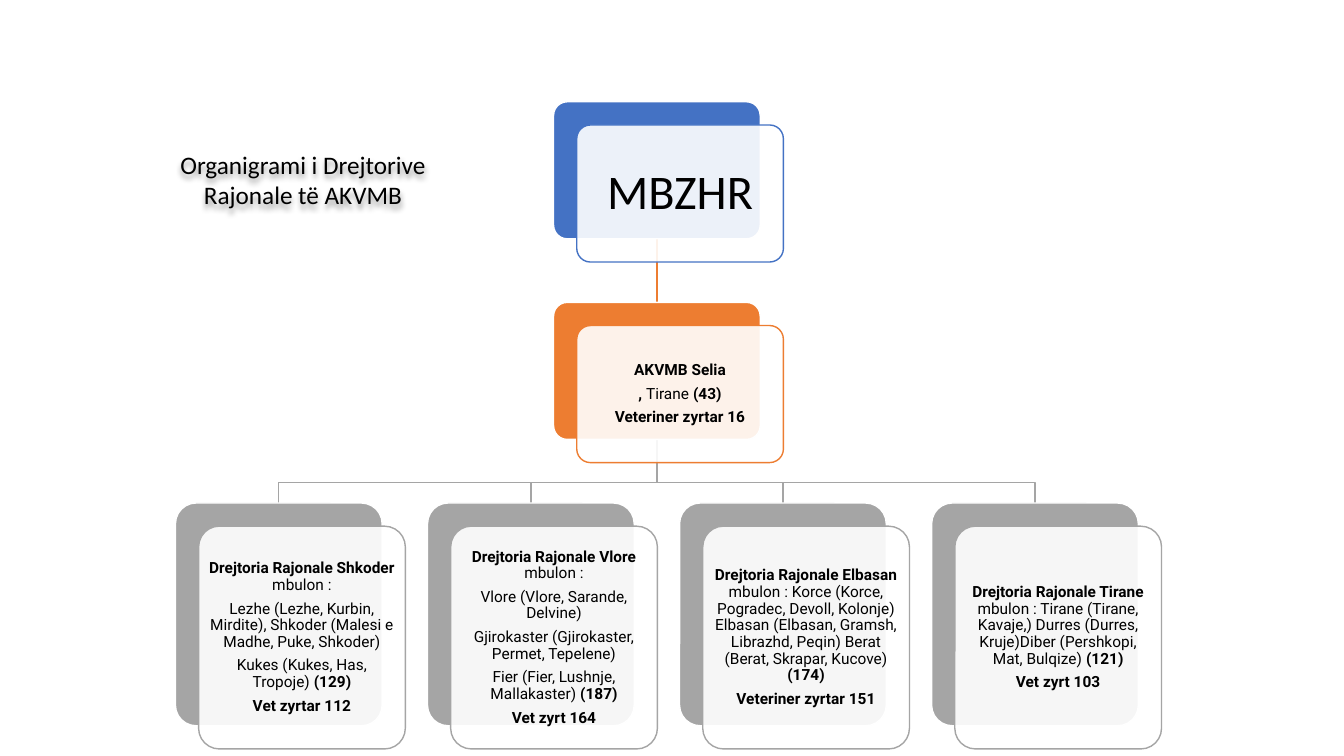
from lxml.etree import SubElement
from pptx import Presentation
from pptx.dml.color import RGBColor
from pptx.enum.shapes import MSO_CONNECTOR as Connector, MSO_SHAPE as Preset
from pptx.enum.text import MSO_ANCHOR as Anchor, PP_ALIGN as Align
from pptx.oxml.ns import qn
from pptx.util import Inches, Pt

COLORS = {
    "ministry": "4472C4",
    "agency": "ED7D31",
    "region": "A5A5A5",
    "paper": "FFFFFF",
    "ink": "000000",
}
CARD_WIDTH = 2.05
CARD_OFFSET = 0.23
CENTER_LEFT = 5.49
CENTER_X = CENTER_LEFT + CARD_WIDTH / 2
UPPER_HEIGHT = 1.36
MINISTRY_TOP, AGENCY_TOP, REGION_TOP = 1.01, 3.0, 4.99
REGION_HEIGHT = 2.21
REGION_LEFT, REGION_STEP = 1.74, 2.5
BRANCH_Y = 4.79

AGENCY = ["*AKVMB Selia*", "*, *Tirane *(43)*", "*Veteriner zyrtar 16*"]
REGIONS = [
    [
        "*Drejtoria Rajonale Shkoder *mbulon :",
        "Lezhe (Lezhe, Kurbin, Mirdite), Shkoder (Malesi e Madhe, Puke, Shkoder)",
        "Kukes (Kukes, Has, Tropoje)* (129)*",
        "*Vet zyrtar 112*",
    ],
    [
        "*Drejtoria Rajonale Vlore *mbulon :",
        "Vlore (Vlore, Sarande, Delvine)",
        "Gjirokaster (Gjirokaster, Permet, Tepelene)",
        "Fier (Fier, Lushnje, Mallakaster) *(187)*",
        "*Vet zyrt 164*",
    ],
    [
        "*Drejtoria Rajonale Elbasan *mbulon : Korce (Korce, Pogradec, Devoll, "
        "Kolonje) Elbasan (Elbasan, Gramsh, Librazhd, Peqin) Berat (Berat, "
        "Skrapar, Kucove) *(174)*",
        "*Veteriner zyrtar 151*",
    ],
    [
        "*Drejtoria Rajonale Tirane *mbulon : Tirane (Tirane, Kavaje,) Durres "
        "(Durres, Kruje)Diber (Pershkopi, Mat, Bulqize) *(121)*",
        "*Vet zyrt 103*",
    ],
]


class Chart:
    def __init__(self, page):
        self.shapes = page.shapes

    def color(self, name):
        return RGBColor.from_string(COLORS[name])

    def outline(self, shape, name):
        shape.line.color.rgb = self.color(name)
        shape.line.width = Pt(1)

    def add_lines(self, frame, lines, size, font, after=0, spacing=1.0):
        frame.word_wrap = True
        frame.vertical_anchor = Anchor.MIDDLE
        for index, line in enumerate(lines):
            para = frame.paragraphs[0] if index == 0 else frame.add_paragraph()
            para.alignment = Align.CENTER
            para.line_spacing = spacing
            para.space_after = Pt(after)
            para.font.size = Pt(size)
            para.font.name = font
            para.font.color.rgb = self.color("ink")
            for part, text in enumerate(line.split("*")):
                if text:
                    span = para.add_run()
                    span.text = text
                    span.font.bold = part % 2 == 1

    def panel(self, left, top, height, fill, line):
        box = self.shapes.add_shape(
            Preset.ROUNDED_RECTANGLE,
            Inches(left), Inches(top), Inches(CARD_WIDTH), Inches(height),
        )
        box.adjustments[0] = 0.1
        box.shadow.inherit = False
        box.fill.solid()
        box.fill.fore_color.rgb = self.color(fill)
        self.outline(box, line)
        return box

    def card(self, left, top, height, accent, lines,
             size=11, font="Roboto", after=5, inset=0.04):
        self.panel(left, top, height, accent, "paper")
        front = self.panel(left + CARD_OFFSET, top + CARD_OFFSET, height, "paper", accent)
        tint = front._element.spPr.find(qn("a:solidFill"))[0]
        SubElement(tint, qn("a:alpha"), val="90000")
        frame = front.text_frame
        frame.margin_left = frame.margin_right = Inches(inset)
        frame.margin_top = frame.margin_bottom = Inches(inset)
        self.add_lines(frame, lines, size, font, after, 0.9)

    def stem(self, x, top, bottom, name):
        line = self.shapes.add_connector(
            Connector.STRAIGHT, Inches(x), Inches(top), Inches(x), Inches(bottom)
        )
        self.outline(line, name)
        SubElement(line._element.spPr, qn("a:effectLst"))

    def branch(self, points, name):
        start, *rest = [(Inches(x), Inches(y)) for x, y in points]
        builder = self.shapes.build_freeform(*start)
        builder.add_line_segments(rest, close=False)
        line = builder.convert_to_shape()
        line.shadow.inherit = False
        line.fill.background()
        self.outline(line, name)

    def title(self, left, top, width, height, text):
        box = self.shapes.add_textbox(
            Inches(left), Inches(top), Inches(width), Inches(height)
        )
        self.add_lines(box.text_frame, [text], 18, "Calibri")
        effects = SubElement(box._element.spPr, qn("a:effectLst"))
        shadow = SubElement(
            effects, qn("a:outerShdw"), blurRad="50800", dist="38100", dir="5400000"
        )
        shade = SubElement(shadow, qn("a:srgbClr"), val=COLORS["ink"])
        SubElement(shade, qn("a:alpha"), val="40000")


def main():
    deck = Presentation()
    deck.slide_width, deck.slide_height = Inches(13.33), Inches(7.5)
    chart = Chart(deck.slides.add_slide(deck.slide_layouts[6]))

    agency_bottom = AGENCY_TOP + UPPER_HEIGHT
    lefts = [REGION_LEFT + REGION_STEP * index for index in range(len(REGIONS))]
    for left in reversed(lefts):
        x = left + CARD_WIDTH / 2
        chart.branch(
            [(CENTER_X, agency_bottom), (CENTER_X, BRANCH_Y), (x, BRANCH_Y), (x, REGION_TOP)],
            "region",
        )
    chart.stem(CENTER_X, MINISTRY_TOP + UPPER_HEIGHT, AGENCY_TOP, "agency")

    chart.card(CENTER_LEFT, MINISTRY_TOP, UPPER_HEIGHT, "ministry", ["MBZHR"],
               size=34.5, font="Calibri", after=15, inset=0.14)
    chart.card(CENTER_LEFT, AGENCY_TOP, UPPER_HEIGHT, "agency", AGENCY)
    for left, lines in zip(lefts, REGIONS):
        chart.card(left, REGION_TOP, REGION_HEIGHT, "region", lines)
    chart.title(1.54, 1.48, 2.93, 0.6, "Organigrami i Drejtorive Rajonale të AKVMB")

    deck.save("out.pptx")


if __name__ == "__main__":
    main()
